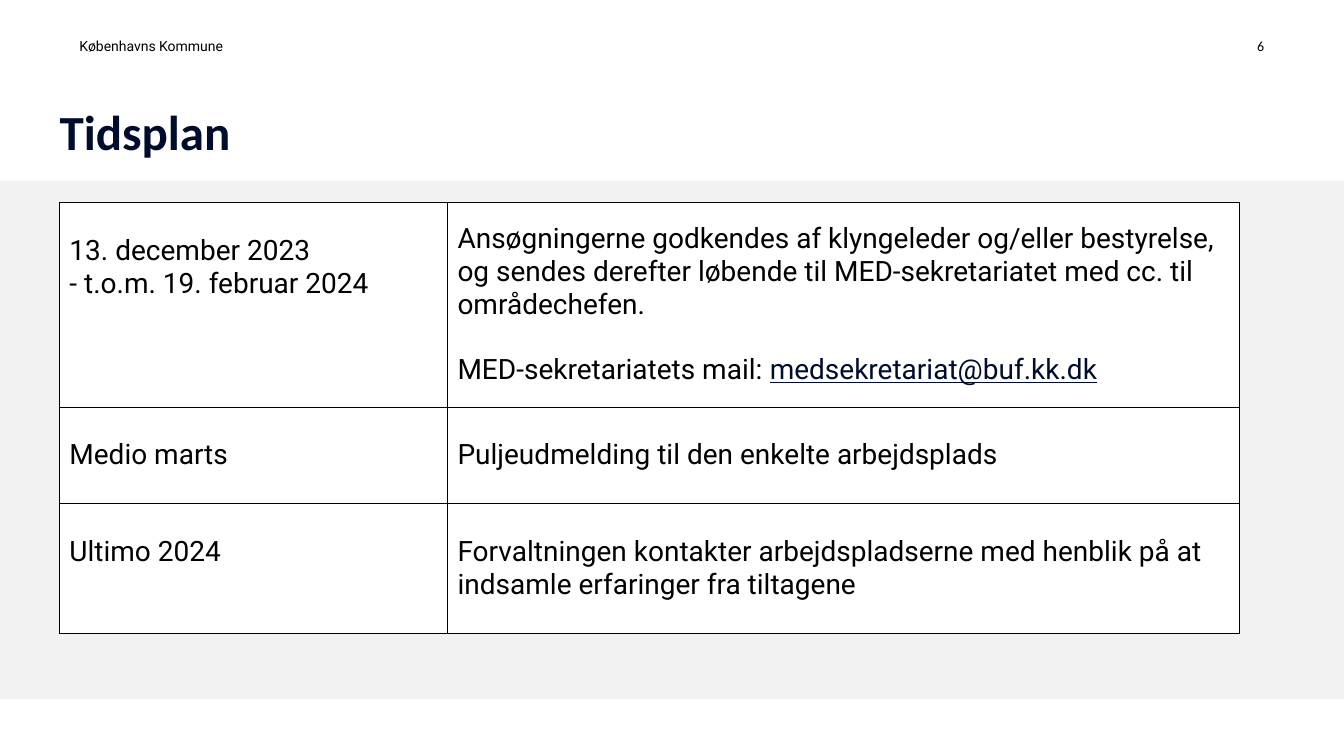
import pptx
import pptx.dml.color
import pptx.enum.shapes
import pptx.enum.text
import pptx.oxml
import pptx.oxml.ns
import pptx.util
from pptx.util import Cm

ALIGN = pptx.enum.text.PP_ALIGN
COLORS = {"ink": "000000", "navy": "000C2E", "panel": "F2F2F2", "paper": "FFFFFF"}
NAMESPACE = pptx.oxml.ns.nsdecls("a")

SCHEDULE = [
    (["13. december 2023\n- t.o.m. 19. februar 2024"],
     ["Ansøgningerne godkendes af klyngeleder og/eller bestyrelse, og sendes derefter "
      "løbende til MED-sekretariatet med cc. til områdechefen.",
      "MED-sekretariatets mail: "]),
    (["Medio marts"], ["Puljeudmelding til den enkelte arbejdsplads"]),
    (["Ultimo 2024"],
     ["Forvaltningen kontakter arbejdspladserne med henblik på at indsamle erfaringer "
      "fra tiltagene"]),
]
MAIL = "medsekretariat@buf.kk.dk"


def color(name):
    return pptx.dml.color.RGBColor.from_string(COLORS[name])


def write(para, text, size=20, font="Roboto", ink="ink", bold=False, underline=False,
          align=ALIGN.LEFT):
    para.alignment = align
    for index, line in enumerate(text.split("\n")):
        if index:
            para.add_line_break()
        span = para.add_run()
        span.text = line
        span.font.size = pptx.util.Pt(size)
        span.font.name = font
        span.font.bold = bold
        span.font.underline = underline
        span.font.color.rgb = color(ink)


class SlideBuilder:
    def __init__(self, deck):
        self.page = deck.slides.add_slide(deck.slide_layouts[5])

    def frame(self, box):
        frame = box.text_frame
        frame.word_wrap = True
        frame.auto_size = pptx.enum.text.MSO_AUTO_SIZE.NONE
        frame.vertical_anchor = pptx.enum.text.MSO_ANCHOR.BOTTOM
        frame.margin_left = frame.margin_right = 0
        frame.margin_top = frame.margin_bottom = 0
        return frame

    def title(self, text, left, top, width, height):
        box = self.page.shapes.title
        box.left, box.top, box.width, box.height = left, top, width, height
        para = self.frame(box).paragraphs[0]
        para.line_spacing = 0.83
        write(para, text, size=35, font="Calibri", ink="navy", bold=True)

    def label(self, text, left, top, width, height, **style):
        box = self.page.shapes.add_textbox(left, top, width, height)
        write(self.frame(box).paragraphs[0], text, size=10, **style)

    def panel(self, left, top, width, height):
        box = self.page.shapes.add_shape(
            pptx.enum.shapes.MSO_SHAPE.RECTANGLE, left, top, width, height)
        box.shadow.inherit = False
        box.fill.solid()
        box.fill.fore_color.rgb = color("panel")
        box.line.fill.background()

    def cell(self, cell, texts, margin):
        cell.margin_left = cell.margin_right = Cm(0.25)
        cell.margin_top = cell.margin_bottom = margin
        properties = cell._tc.get_or_add_tcPr()
        for side in ("lnL", "lnR", "lnT", "lnB"):
            properties.append(pptx.oxml.parse_xml(
                f'<a:{side} {NAMESPACE} w="12700"><a:solidFill>'
                f'<a:srgbClr val="{COLORS["ink"]}"/></a:solidFill></a:{side}>'))
        cell.fill.solid()
        cell.fill.fore_color.rgb = color("paper")
        frame = cell.text_frame
        for index, text in enumerate(texts):
            para = frame.add_paragraph() if index else frame.paragraphs[0]
            if index:
                para.space_before = pptx.util.Pt(23.5)
            write(para, text)

    def table(self, rows, left, top, widths, heights):
        table = self.page.shapes.add_table(
            len(rows), len(widths), left, top, sum(widths), sum(heights)).table
        table.first_row = table.horz_banding = False
        for column, width in zip(table.columns, widths):
            column.width = width
        for row, height, entries in zip(table.rows, heights, rows):
            row.height = height
            for cell, texts in zip(row.cells, entries):
                self.cell(cell, texts, Cm(0.5 if len(texts) > 1 else 0.8))
        return table


def main():
    deck = pptx.Presentation()
    deck.slide_width, deck.slide_height = Cm(33.87), Cm(19.05)
    slide = SlideBuilder(deck)
    slide.label("Københavns Kommune", Cm(2), Cm(0.86), Cm(9.78), Cm(0.5))
    slide.panel(0, Cm(4.55), deck.slide_width, Cm(13.07))
    slide.label("6", Cm(30.76), Cm(0.86), Cm(1.1), Cm(0.5),
                font="Calibri", align=ALIGN.RIGHT)
    table = slide.table(SCHEDULE, Cm(1.5), Cm(5.1), [Cm(9.78), Cm(19.96)],
                        [Cm(5.16), Cm(2.42), Cm(3.28)])
    mail_para = table.cell(0, 1).text_frame.paragraphs[-1]
    write(mail_para, MAIL, ink="navy", underline=True)
    slide.title("Tidsplan", Cm(1.5), Cm(1.85), Cm(19.58), Cm(2.18))
    deck.save("out.pptx")


if __name__ == "__main__":
    main()
